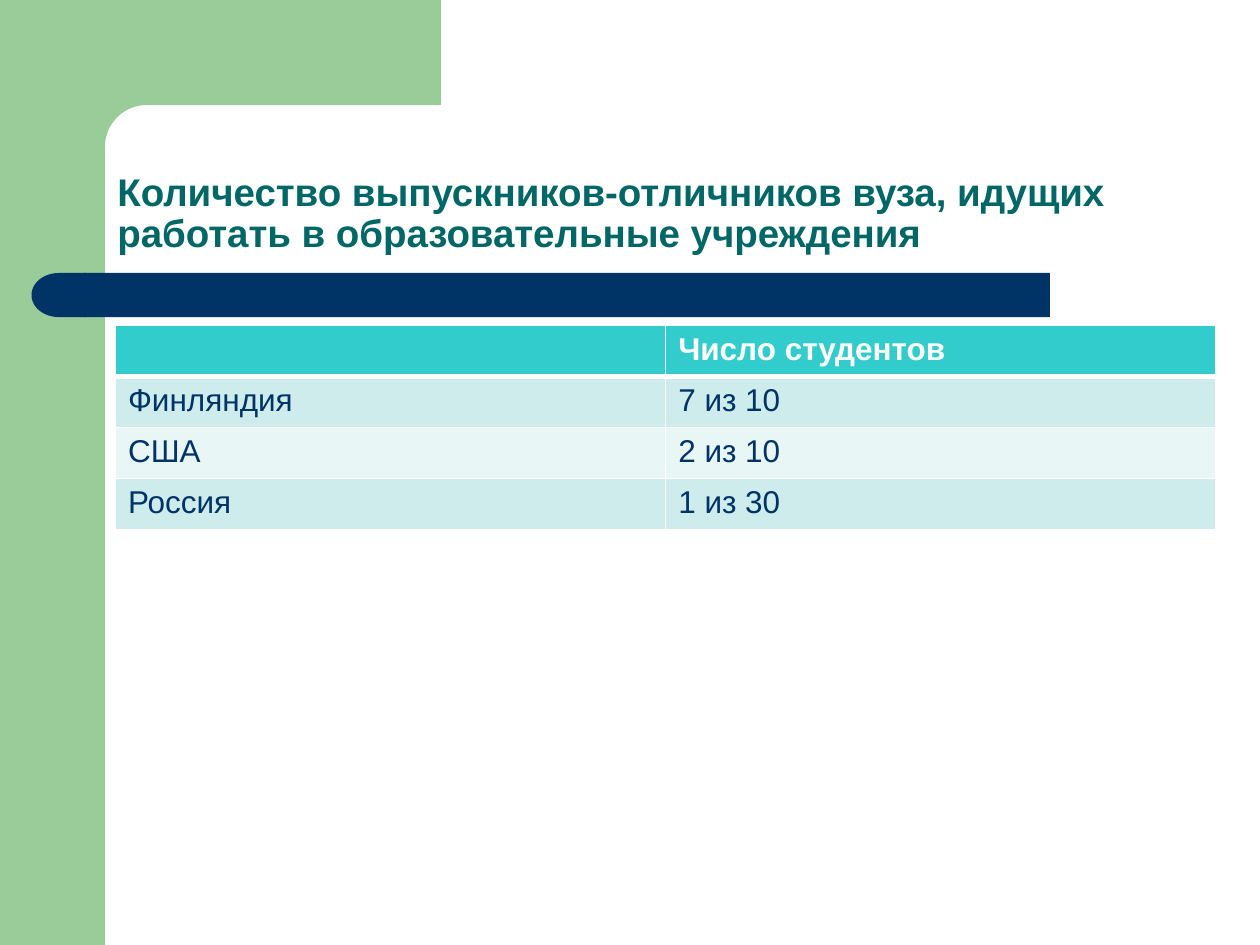
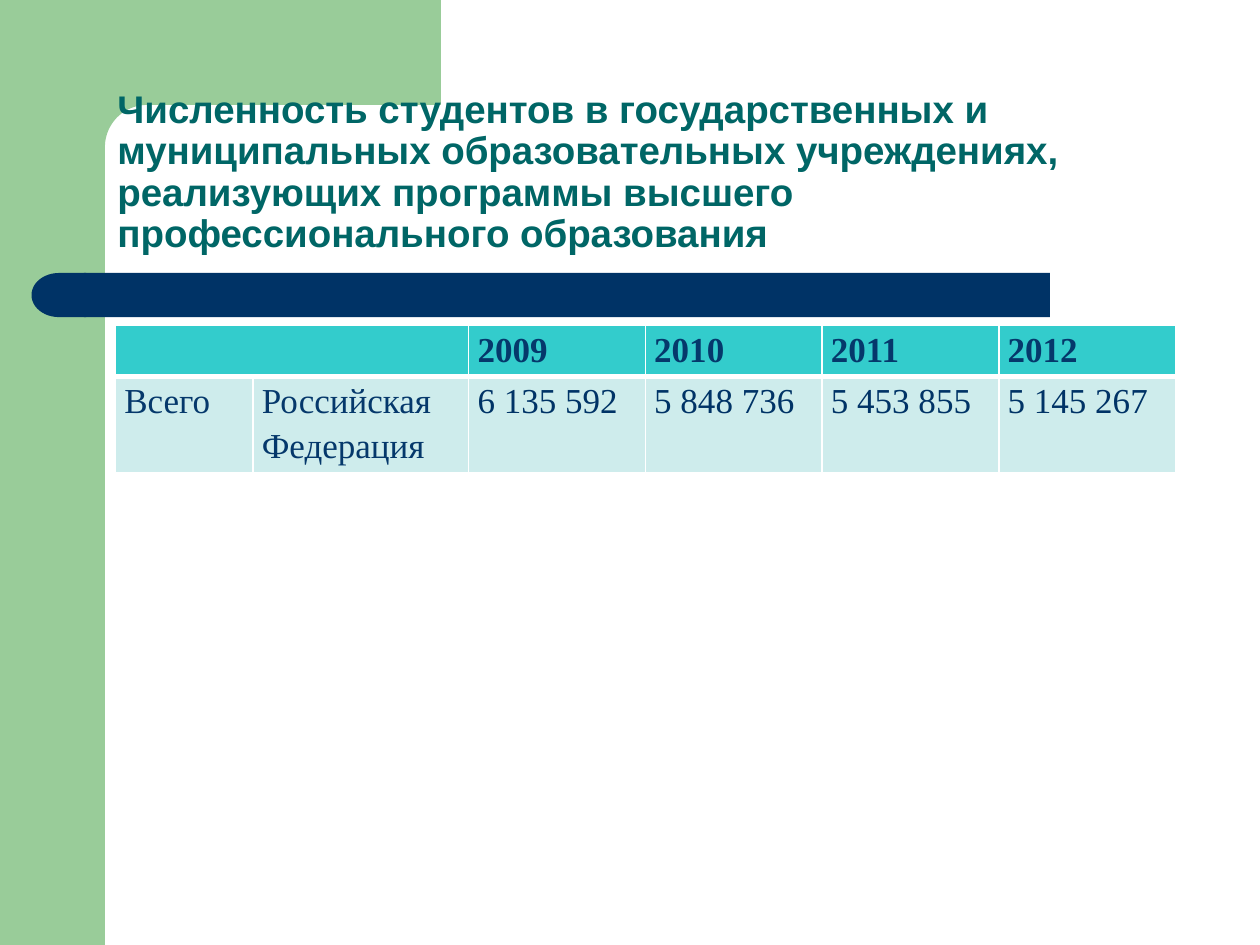
from math import cos, pi, sin

from lxml.etree import SubElement
from pptx import Presentation
from pptx.dml.color import RGBColor
from pptx.enum.shapes import MSO_SHAPE
from pptx.enum.text import MSO_ANCHOR
from pptx.oxml import parse_xml
from pptx.oxml.ns import nsdecls, qn
from pptx.util import Inches, Pt

UNITS_PER_INCH = 12
SLIDE_COLS, SLIDE_ROWS = 120, 90
SIDEBAR_COLS = 10
TITLE_BOTTOM = 25
TABLE_LEFT, TABLE_TOP = 11, 31
HEADER_ROWS = 4.86

GREEN, NAVY, TEAL = "99CC99", "003366", "006666"
TURQUOISE, PALE, PALER = "33CCCC", "CEECEC", "E8F6F6"
WHITE, INK = "FFFFFF", "05386B"
NO_TABLE_STYLE = "{2D5ABB26-0587-4C30-8999-92F81FD0307C}"


def units(count):
    """Turn grid units into a length."""
    return Inches(count / UNITS_PER_INCH)


def paint(target, color):
    """Fill a shape or cell with a hex colour."""
    target.fill.solid()
    target.fill.fore_color.rgb = RGBColor.from_string(color)


def finish(shape, color):
    """Give a shape a flat fill without outline or shadow."""
    paint(shape, color)
    shape.line.fill.background()
    shape.shadow.inherit = False
    return shape


def add_block(slide, kind, box, color):
    """Draw a flat preset shape in a box of grid units."""
    return finish(slide.shapes.add_shape(kind, *map(units, box)), color)


def style_text(paragraph, font_name, size, color, bold, spacing):
    """Set the font and line spacing of a paragraph."""
    paragraph.line_spacing = spacing
    font = paragraph.font
    font.name, font.size, font.bold = font_name, Pt(size), bold
    font.color.rgb = RGBColor.from_string(color)


def add_corner(slide, box, sidebar, radius):
    """Draw the top band whose inner corner is rounded into the sidebar."""
    left, top, width, height = box
    band_bottom = top + sidebar
    arc = [
        (sidebar + radius * (1 - sin(angle)), band_bottom + radius * (1 - cos(angle)))
        for angle in (step * pi / 48 for step in range(25))
    ]
    outline = [(left + width, top), (left + width, band_bottom), *arc,
               (sidebar, top + height), (left, top + height)]
    builder = slide.shapes.build_freeform(units(left), units(top))
    builder.add_line_segments([(units(x), units(y)) for x, y in outline], close=True)
    finish(builder.convert_to_shape(), GREEN)


def add_bar(slide, box, cap_cols):
    """Draw the navy bar with its rounded left cap."""
    left, top, width, height = box
    cap_overlap = 0.2
    bar_left = left + cap_cols - cap_overlap
    add_block(slide, MSO_SHAPE.RECTANGLE,
              (bar_left, top, left + width - bar_left, height), NAVY)
    cap = add_block(slide, MSO_SHAPE.FLOWCHART_DELAY, (left, top, cap_cols, height), NAVY)
    cap._element.spPr.find(qn("a:xfrm")).set("flipH", "1")


def add_title(slide, text, rows):
    """Place the heading so that it rests on the bar."""
    box = (SIDEBAR_COLS, TITLE_BOTTOM - rows, 104, rows)
    heading = slide.shapes.add_textbox(*map(units, box)).text_frame
    heading.word_wrap = True
    heading.vertical_anchor = MSO_ANCHOR.BOTTOM
    heading.text = text
    style_text(heading.paragraphs[0], "Arial", 22, TEAL, True, 0.9)


def set_borders(cell, top, bottom):
    """Draw white cell borders, with the given top and bottom widths."""
    properties = cell._tc.get_or_add_tcPr()
    for index, (side, width) in enumerate(zip("LRTB", (1, 1, top, bottom))):
        border = parse_xml(f'<a:ln{side} {nsdecls("a")} w="{Pt(width)}"/>')
        fill = SubElement(border, qn("a:solidFill"))
        SubElement(fill, qn("a:srgbClr"), val=WHITE)
        properties.insert(index, border)


def add_table(slide, rows, columns, heights, style_cell):
    """Place a banded table under the bar and style each cell."""
    size = (sum(columns), sum(heights))
    frame = slide.shapes.add_table(len(rows), len(columns),
                                   *map(units, (TABLE_LEFT, TABLE_TOP, *size)))
    table = frame.table
    table._tbl.tblPr.find(qn("a:tableStyleId")).text = NO_TABLE_STYLE
    table.first_row = table.horz_banding = False
    for column, width in zip(table.columns, columns):
        column.width = units(width)
    for row, height in zip(table.rows, heights):
        row.height = units(height)
    for r, texts in enumerate(rows):
        for c, text in enumerate(texts):
            cell = table.cell(r, c)
            cell.text = text
            paint(cell, (PALE if r % 2 else PALER) if r else TURQUOISE)
            set_borders(cell, 3 if r == 1 else 1, 1 if r else 3)
            style_cell(cell, r, c)
    return table


def style_country_cell(cell, row, column):
    """Style a cell of the graduates table."""
    style_text(cell.text_frame.paragraphs[0], "Arial", 18,
               NAVY if row else WHITE, row == 0, 1.0)


def style_year_cell(cell, row, column):
    """Style a cell of the enrolment table."""
    cell.margin_left = cell.margin_right = Inches(0.07)
    cell.margin_top = cell.margin_bottom = 0
    is_count = row > 0 and column > 1
    style_text(cell.text_frame.paragraphs[0], "Times New Roman", 20,
               NAVY if is_count else INK, row == 0, 1.15)


def new_slide(deck, title, title_rows):
    """Start a slide with the shared bands and a heading in front of them."""
    slide = deck.slides.add_slide(deck.slide_layouts[6])
    add_block(slide, MSO_SHAPE.RECTANGLE, (0, 0, SIDEBAR_COLS, SLIDE_ROWS), GREEN)
    add_corner(slide, (6, 0, 36, 15.4), SIDEBAR_COLS, 4)
    add_bar(slide, (3, 26, 97, 4.2), 5.2)
    add_title(slide, title, title_rows)
    return slide


def add_graduates_slide(deck):
    """Compare how many top graduates go to work in education."""
    slide = new_slide(
        deck,
        "Количество выпускников-отличников вуза, идущих работать "
        "в образовательные учреждения", 15)
    rows = [("", "Число студентов"), ("Финляндия", "7 из 10"),
            ("США", "2 из 10"), ("Россия", "1 из 30")]
    add_table(slide, rows, [52.4] * 2, [HEADER_ROWS] * len(rows), style_country_cell)


def add_enrolment_slide(deck):
    """Show student numbers by year."""
    slide = new_slide(
        deck,
        "Численность студентов в государственных и муниципальных "
        "образовательных учреждениях, реализующих программы высшего "
        "профессионального образования", 20.7)
    rows = [("", "", "2009", "2010", "2011", "2012"),
            ("Всего", "Российская Федерация",
             "6 135 592", "5 848 736", "5 453 855", "5 145 267")]
    table = add_table(slide, rows, [13.1, 20.55] + [16.83] * 4,
                      [HEADER_ROWS, 8.9], style_year_cell)
    table.cell(0, 0).merge(table.cell(0, 1))


def main():
    """Build and save the deck."""
    deck = Presentation()
    deck.slide_width, deck.slide_height = units(SLIDE_COLS), units(SLIDE_ROWS)
    add_graduates_slide(deck)
    add_enrolment_slide(deck)
    deck.save("out.pptx")


if __name__ == "__main__":
    main()
